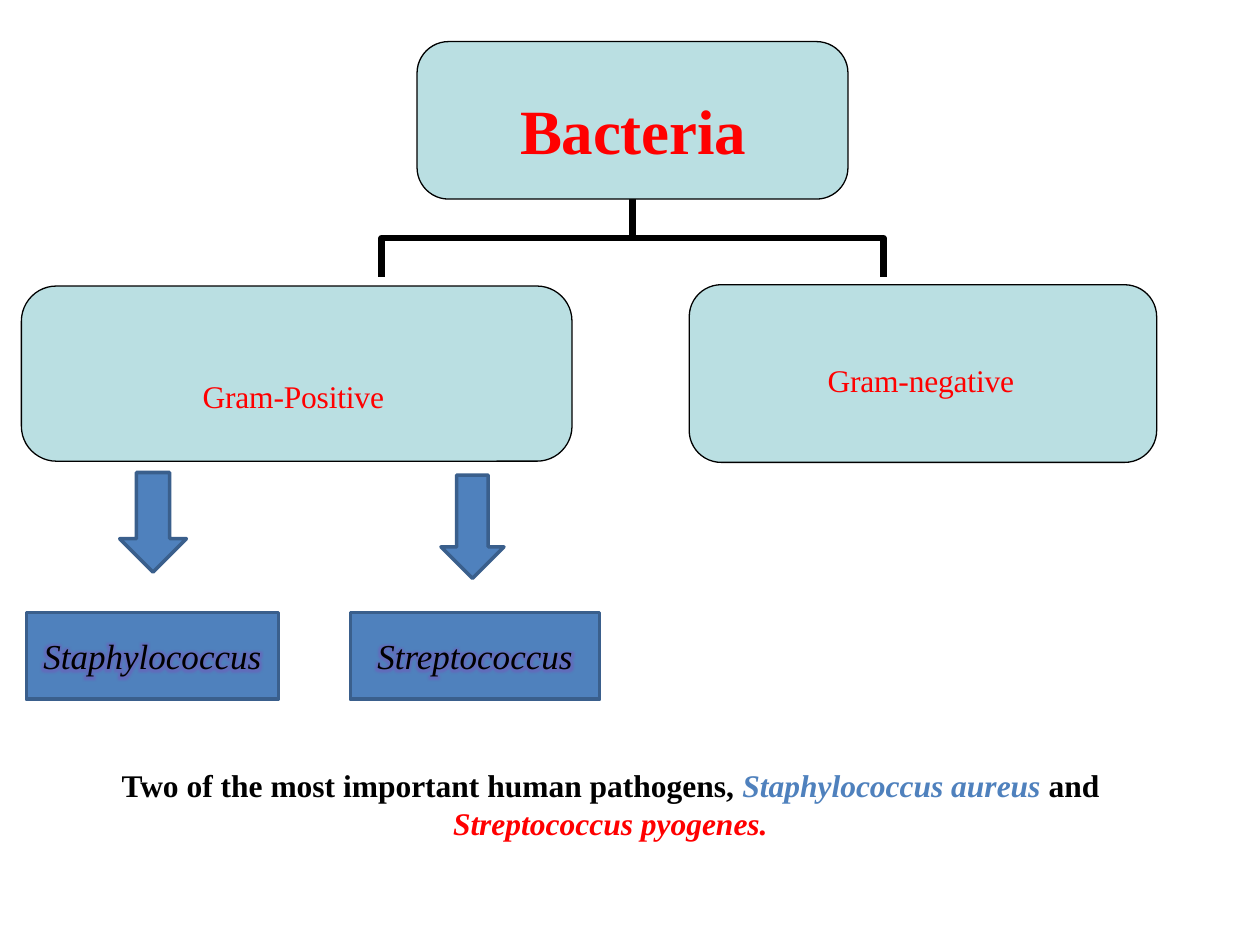
from lxml import etree
from pptx import Presentation
from pptx.dml.color import RGBColor
from pptx.enum.shapes import MSO_SHAPE as Shape
from pptx.enum.text import MSO_ANCHOR as Anchor, MSO_AUTO_SIZE as AutoSize, PP_ALIGN as Align
from pptx.oxml import parse_xml
from pptx.oxml.ns import qn
from pptx.util import Inches, Pt

COLORS = {
    "black": "000000",
    "red": "FF0000",
    "blue": "4F81BD",
    "blue_edge": "3A5F8C",
    "aqua": "BADFE2",
    "glow": "8064A2",
}
FONT = "Times New Roman"
DRAWING_NS = "http://schemas.openxmlformats.org/drawingml/2006/main"


def rgb(name):
    return RGBColor.from_string(COLORS[name])


def add_glow(span):
    """Put a soft glow around the letters of a run."""
    glow = parse_xml(
        f'<a:effectLst xmlns:a="{DRAWING_NS}"><a:glow rad="101600">'
        f'<a:srgbClr val="{COLORS["glow"]}"><a:satMod val="175000"/>'
        '<a:alpha val="40000"/></a:srgbClr></a:glow></a:effectLst>'
    )
    span.font.fill._xPr.find(qn("a:solidFill")).addnext(glow)


def add_span(para, text, size=18, color="black", bold=False, italic=False,
             spacing=None, glow=False):
    span = para.add_run()
    span.text = text
    font = span.font
    font.name, font.size = FONT, Pt(size)
    font.bold, font.italic = bold, italic
    font.color.rgb = rgb(color)
    if spacing is not None:
        span._r.get_or_add_rPr().set("spc", str(round(spacing * 100)))
    if glow:
        add_glow(span)


def add_shape(page, kind, place, fill, edge, width):
    shape = page.shapes.add_shape(kind, *map(Inches, place))
    shape.shadow.inherit = False
    shape.fill.solid()
    shape.fill.fore_color.rgb = rgb(fill)
    shape.line.color.rgb = rgb(edge)
    shape.line.width = Pt(width)
    return shape


def add_text(page, place, wrap=True, align=Align.CENTER, before=0):
    """Add an empty text box and return its paragraph."""
    box = page.shapes.add_textbox(*map(Inches, place))
    frame = box.text_frame
    frame.word_wrap = wrap
    frame.auto_size = AutoSize.SHAPE_TO_FIT_TEXT
    para = frame.paragraphs[0]
    para.alignment = align
    para.space_before = Pt(before)
    return para


def add_label(page, text, place, **style):
    """Add a red label of the tree."""
    heading = style.get("bold", False)
    para = add_text(page, place, wrap=heading, before=0.9,
                    align=Align.CENTER if heading else Align.LEFT)
    para._p.get_or_add_pPr().set("marL", str(Inches(0.01)))
    add_span(para, text, color="red", spacing=-0.1, **style)


def add_branches(page, root, ends, bar, bottom):
    """Draw the bracket that leads from the root down to each end."""
    x, top = root
    builder = page.shapes.build_freeform(Inches(x), Inches(top), scale=1.0)
    for number, end in enumerate(ends):
        if number:
            builder.move_to(Inches(x), Inches(top))
        corners = [(x, bar), (end, bar), (end, bottom)]
        builder.add_line_segments(
            [(Inches(a), Inches(b)) for a, b in corners], close=False)
    bracket = builder.convert_to_shape()
    bracket.shadow.inherit = False
    bracket.fill.background()
    bracket.line.color.rgb = rgb("black")
    bracket.line.width = Pt(3.75)
    etree.SubElement(bracket.line._get_or_add_ln(), qn("a:round"))


def add_genus(page, text, place):
    box = add_shape(page, Shape.RECTANGLE, place, "blue", "blue_edge", 2)
    frame = box.text_frame
    frame.word_wrap = True
    frame.vertical_anchor = Anchor.MIDDLE
    para = frame.paragraphs[0]
    para.alignment = Align.CENTER
    add_span(para, text, size=20, italic=True, glow=True)


def main():
    deck = Presentation()
    deck.slide_width, deck.slide_height = Inches(10), Inches(7.5)
    page = deck.slides.add_slide(deck.slide_layouts[6])

    # Tree of bacteria
    add_branches(page, root=(5.02, 1.58), ends=(3.03, 7.01), bar=1.89, bottom=2.2)
    for place, rounding in [
        ((3.31, 0.33, 3.42, 1.25), 0.2),
        ((0.17, 2.27, 4.37, 1.39), 0.2),
        ((5.47, 2.26, 3.71, 1.41), 0.18),
    ]:
        node = add_shape(page, Shape.ROUNDED_RECTANGLE, place, "aqua", "black", 0.75)
        node.adjustments[0] = rounding
    add_label(page, "Bacteria", (3.77, 0.68, 2.5, 0.71), size=36, bold=True)
    add_label(page, "Gram-Positive", (1.5, 2.94, 1.68, 0.4))
    add_label(page, "Gram-negative", (6.46, 2.82, 1.72, 0.4))

    # Gram-positive genera
    for text, arrow, place in [
        ("Streptococcus", (3.5, 3.77, 0.5, 0.82), (2.78, 4.86, 1.98, 0.69)),
        ("Staphylococcus", (0.95, 3.75, 0.53, 0.79), (0.21, 4.86, 2, 0.69)),
    ]:
        add_shape(page, Shape.DOWN_ARROW, arrow, "blue", "blue_edge", 2)
        add_genus(page, text, place)

    # Closing statement
    para = add_text(page, (0.52, 6.03, 8.65, 0.71))
    for text, color, italic in [
        ("Two of the most important human pathogens, ", "black", False),
        ("Staphylococcus aureus ", "blue", True),
        ("and ", "black", False),
        ("Streptococcus pyogenes.", "red", True),
    ]:
        add_span(para, text, color=color, bold=True, italic=italic)

    deck.save("out.pptx")


if __name__ == "__main__":
    main()
